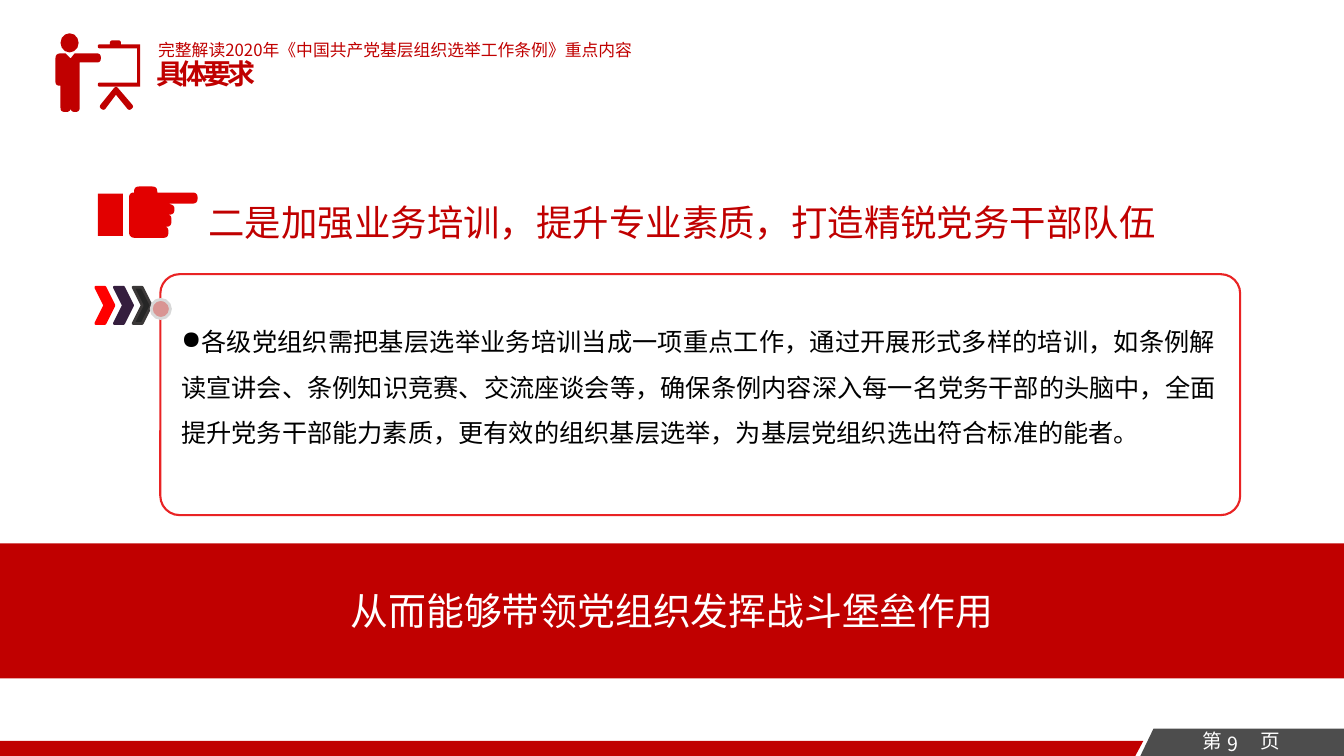
import math

import pptx
import pptx.dml.color
import pptx.enum.shapes
import pptx.enum.text
import pptx.oxml.ns
import pptx.util
from lxml import etree

Inches = pptx.util.Inches
SHAPE = pptx.enum.shapes.MSO_SHAPE
ALIGN = pptx.enum.text.PP_ALIGN
ANCHOR = pptx.enum.text.MSO_ANCHOR
FONT = "Noto Sans CJK SC"
WIDTH, HEIGHT = 13.33, 7.5
COLORS = {
    "red": "C00000", "hand": "E20000", "bright": "FF0000", "frame": "E92324",
    "plum": "351E3E", "black": "262626", "edge": "3B3838", "tab": "4D4D4D",
    "dot": "D99593", "ring": "D8D8D8", "white": "FFFFFF", "text": "000000",
}


def rgb(name):
    return pptx.dml.color.RGBColor.from_string(COLORS[name])


def paint(sp, fill=None, line=None, width=1):
    sp.shadow.inherit = False
    if fill:
        sp.fill.solid()
        sp.fill.fore_color.rgb = rgb(fill)
    else:
        sp.fill.background()
    if line:
        sp.line.color.rgb = rgb(line)
        sp.line.width = pptx.util.Pt(width)
    else:
        sp.line.fill.background()
    return sp


def add_shape(s, kind, box, fill=None, line=None, width=1):
    sp = s.shapes.add_shape(kind, *map(Inches, box))
    return paint(sp, fill, line, width)


def write(tf, text, size, color, align=ALIGN.LEFT, bold=False):
    """Fill the first paragraph with one run and return both."""
    tf.word_wrap = True
    p = tf.paragraphs[0]
    p.alignment = align
    r = p.add_run()
    r.text = text
    r.font.size = pptx.util.Pt(size)
    r.font.name = FONT
    r.font.bold = bold
    r.font.color.rgb = rgb(color)
    etree.SubElement(r._r.get_or_add_rPr(), pptx.oxml.ns.qn("a:ea"), typeface=FONT)
    return p, r


def add_text(s, box, *args, **kwargs):
    sp = s.shapes.add_textbox(*map(Inches, box))
    p, r = write(sp.text_frame, *args, **kwargs)
    return sp.text_frame, p, r


def rounded(points, steps=6):
    """Turn (x, y, radius) corners into a plain outline with soft corners."""
    outline = []
    for i, (x, y, *radius) in enumerate(points):
        if not radius:
            outline.append((x, y))
            continue
        ends = []
        for nx, ny, *_ in (points[i - 1], points[(i + 1) % len(points)]):
            t = radius[0] / math.hypot(nx - x, ny - y)
            ends.append((x + (nx - x) * t, y + (ny - y) * t))
        (ax, ay), (bx, by) = ends
        for k in range(steps + 1):
            t = k / steps
            a, m, b = (1 - t) ** 2, 2 * t * (1 - t), t * t
            outline.append((a * ax + m * x + b * bx, a * ay + m * y + b * by))
    return outline


def add_outline(s, left, top, points, color):
    dots = [(Inches(left + x), Inches(top + y)) for x, y in rounded(points)]
    fb = s.shapes.build_freeform(*dots[0])
    fb.add_line_segments(dots[1:], close=True)
    return paint(fb.convert_to_shape(), color)


def add_footer(s, left, top, w, h):
    add_outline(s, left, top + h - 0.15,
                [(0, 0), (11.34, 0), (11.26, 0.15), (0, 0.15)], "red")
    add_outline(s, left, top, [(11.44, 0), (w, 0), (w, h), (11.31, h)], "tab")
    for text, center, dy in (("第", 12.02, 0), ("9", 12.23, 0.03), ("页", 12.6, 0)):
        tf, p, r = add_text(s, (left + center - 0.2, top + dy, 0.4, 0.24),
                            text, 14, "white", ALIGN.CENTER)
        tf.margin_left = tf.margin_right = tf.margin_top = tf.margin_bottom = 0


def add_presenter(s, left, top):
    """Person pointing at a flip chart."""
    add_shape(s, SHAPE.OVAL, (left + 0.05, top, 0.18, 0.19), "red")
    body = [(0, 0.2, 0.05), (0.1, 0.2), (0.15, 0.25), (0.19, 0.2),
            (0.45, 0.2, 0.04), (0.45, 0.29, 0.04), (0.24, 0.29),
            (0.24, 0.78, 0.04), (0.15, 0.78, 0.04), (0.15, 0.73),
            (0.15, 0.78, 0.04), (0.05, 0.78, 0.04), (0.05, 0.52), (0, 0.52, 0.04)]
    board = [(0.42, 0.11, 0.02), (0.54, 0.11), (0.54, 0.07, 0.03),
             (0.65, 0.07, 0.03), (0.65, 0.11), (0.84, 0.11), (0.84, 0.53),
             (0.42, 0.53, 0.02), (0.42, 0.49, 0.02), (0.81, 0.49),
             (0.81, 0.15), (0.42, 0.15, 0.02)]
    legs = [(0.6, 0.52, 0.03), (0.78, 0.73, 0.03), (0.73, 0.77, 0.03),
            (0.6, 0.61), (0.48, 0.77, 0.03), (0.43, 0.73, 0.03)]
    for points in (body, board, legs):
        add_outline(s, left, top, points, "red")


def add_header(s, left, top):
    add_presenter(s, left, top)
    tf, p, r = add_text(s, (left + 0.9, top + 0.18, 1.45, 0.44),
                        "具体要求", 20, "red", ALIGN.JUSTIFY, True)
    r._r.get_or_add_rPr().set("spc", "-300")
    tf, p, r = add_text(s, (left + 0.92, top - 0.11, 7.69, 0.55),
                        "完整解读2020年《中国共产党基层组织选举工作条例》重点内容", 12, "red")
    tf.vertical_anchor = ANCHOR.MIDDLE


def add_heading(s, left, top):
    tf, p, r = add_text(s, (left + 1, top - 0.13, 10.56, 0.68),
                        "二是加强业务培训，提升专业素质，打造精锐党务干部队伍", 26, "red")
    p.line_spacing = 1.5
    add_shape(s, SHAPE.RECTANGLE, (left, top + 0.07, 0.25, 0.42), "hand")
    hand = [(0.31, 0.06, 0.05), (0.36, 0.06), (0.36, 0, 0.05), (0.59, 0, 0.05),
            (0.59, 0.06), (0.99, 0.06, 0.05), (0.99, 0.17, 0.05), (0.7, 0.17),
            (0.76, 0.19, 0.03), (0.76, 0.28, 0.05), (0.67, 0.28),
            (0.73, 0.28, 0.04), (0.73, 0.4, 0.05), (0.65, 0.4),
            (0.7, 0.4, 0.04), (0.7, 0.51, 0.05), (0.31, 0.51, 0.06)]
    add_outline(s, left, top, hand, "hand")


def add_panel(s, left, top, w, h):
    """Framed paragraph with its chevrons and marker."""
    marks = (("bright", "bright"), ("plum", "plum"), ("black", "edge"))
    for i, (fill, line) in enumerate(marks):
        add_shape(s, SHAPE.CHEVRON, (left - 0.64 + i * 0.185, top + 0.13, 0.18, 0.36),
                  fill, line, 2)
    frame = add_shape(s, SHAPE.ROUNDED_RECTANGLE, (left, top, w, h),
                      None, "frame", 1.5)
    frame.adjustments[0] = 0.08
    add_shape(s, SHAPE.FLOWCHART_CONNECTOR, (left - 0.09, top + 0.25, 0.19, 0.19),
              "dot", "ring", 2)
    text = ("各级党组织需把基层选举业务培训当成一项重点工作，通过开展形式多样的培训，"
            "如条例解读宣讲会、条例知识竞赛、交流座谈会等，确保条例内容深入每一名党务干部的头脑中，"
            "全面提升党务干部能力素质，更有效的组织基层选举，为基层党组织选出符合标准的能者。")
    tf, p, r = add_text(s, (left + 0.11, top + 0.32, w - 0.25, 1.46),
                        text, 18, "text", ALIGN.JUSTIFY)
    p.line_spacing = 1.5
    pPr = p._p.get_or_add_pPr()
    pPr.set("marL", "0")
    pPr.set("indent", str(Inches(-0.31)))
    etree.SubElement(pPr, pptx.oxml.ns.qn("a:buChar"), char="●")


def add_banner(s, *box):
    sp = add_shape(s, SHAPE.RECTANGLE, box, "red")
    sp.text_frame.vertical_anchor = ANCHOR.MIDDLE
    write(sp.text_frame, "从而能够带领党组织发挥战斗堡垒作用", 27, "white", ALIGN.CENTER)


def main():
    prs = pptx.Presentation()
    prs.slide_width, prs.slide_height = Inches(WIDTH), Inches(HEIGHT)
    s = prs.slides.add_slide(prs.slide_layouts[6])
    add_footer(s, 0, 7.23, WIDTH, 0.27)
    add_header(s, 0.55, 0.33)
    add_heading(s, 0.97, 1.85)
    add_panel(s, 1.59, 2.72, 10.71, 2.39)
    add_banner(s, 0, 5.39, WIDTH, 1.34)
    prs.save("out.pptx")


if __name__ == "__main__":
    main()
